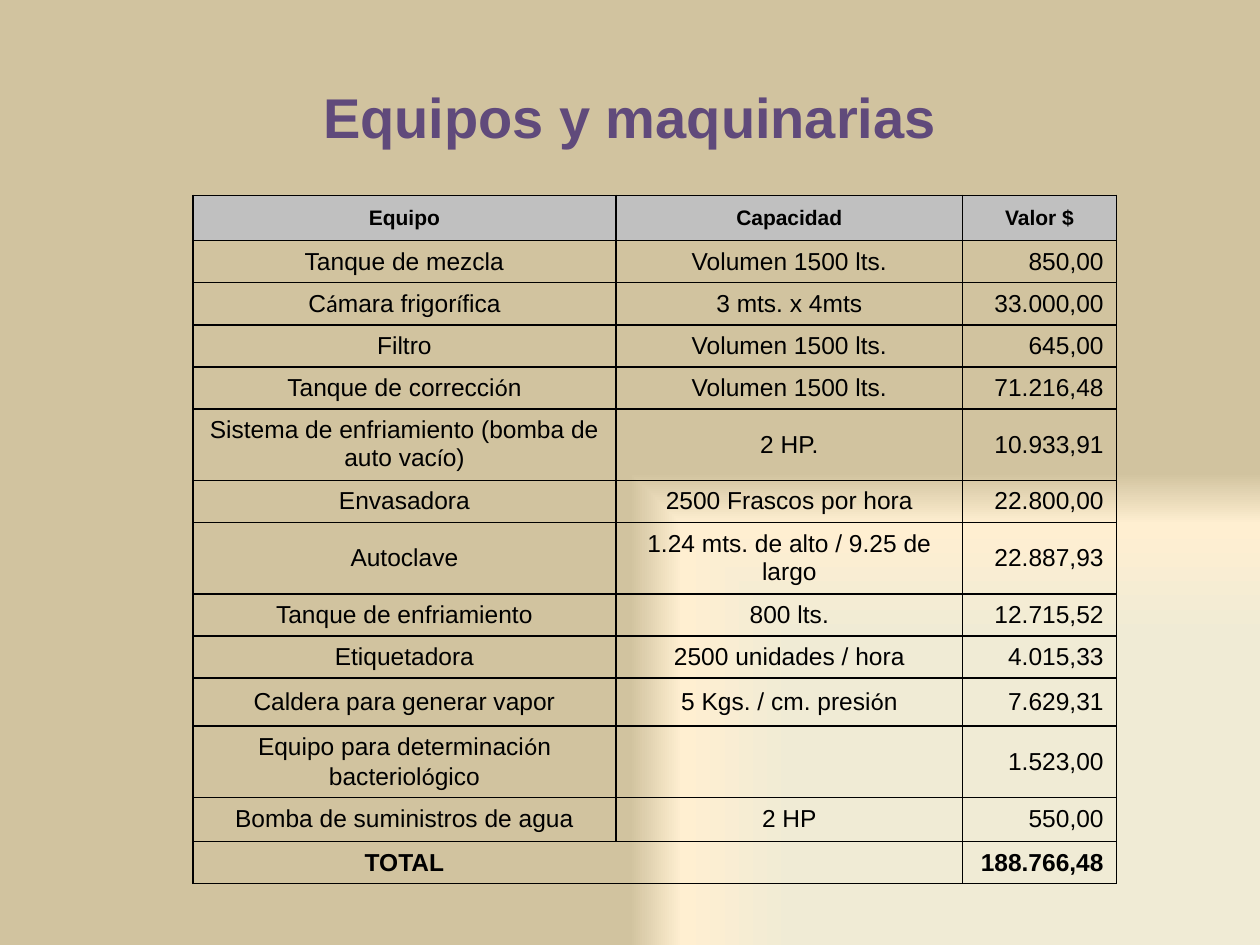
"""Build the equipment and machinery cost slide."""
from dataclasses import dataclass
from itertools import groupby

from lxml import etree
from pptx import Presentation
from pptx import util as u
from pptx.dml.color import RGBColor
from pptx.enum import text
from pptx.oxml import parse_xml
from pptx.oxml.ns import nsdecls, qn

COLORS = {
    "title": "604A7B",
    "ink": "000000",
    "header": "C0C0C0",
    "cream": "F0EBD5",
    "glow": "FFEFD1",
    "sand": "D1C39F",
}
ACCENTED = "áíó"
COLUMN_WIDTHS = (3.36, 2.75, 1.22)
CENTER, RIGHT = text.PP_ALIGN.CENTER, text.PP_ALIGN.RIGHT


@dataclass(frozen=True)
class Row:
    height: float
    equipment: str
    capacity: str
    value: str
    size: int = 14
    bold: bool = False


ROWS = (
    Row(0.36, "Equipo", "Capacidad", "Valor $", size=12, bold=True),
    Row(0.28, "Tanque de mezcla", "Volumen 1500 lts.", "850,00"),
    Row(0.29, "Cámara frigorífica", "3 mts. x 4mts", "33.000,00"),
    Row(0.28, "Filtro", "Volumen 1500 lts.", "645,00"),
    Row(0.29, "Tanque de corrección", "Volumen 1500 lts.", "71.216,48"),
    Row(0.5, "Sistema de enfriamiento (bomba de auto vacío)", "2 HP.", "10.933,91"),
    Row(0.31, "Envasadora", "2500 Frascos por hora", "22.800,00"),
    Row(0.3, "Autoclave", "1.24 mts. de alto / 9.25 de largo", "22.887,93"),
    Row(0.32, "Tanque de enfriamiento", "800 lts.", "12.715,52"),
    Row(0.28, "Etiquetadora", "2500 unidades / hora", "4.015,33"),
    Row(0.38, "Caldera para generar vapor", "5 Kgs. / cm. presión", "7.629,31"),
    Row(0.44, "Equipo para determinación bacteriológico", "", "1.523,00"),
    Row(0.35, "Bomba de suministros de agua", "2 HP", "550,00"),
    Row(0.33, "TOTAL", "", "188.766,48", bold=True),
)


def style_span(span, size: int, color: str, bold: bool, name: str = "Arial") -> None:
    """Format one run of text."""
    span.font.name = name
    span.font.size = u.Pt(size)
    span.font.bold = bold
    span.font.color.rgb = RGBColor.from_string(COLORS[color])


def paint_background(page) -> None:
    """Fill the page with a gradient that spreads from the lower right corner."""
    page.background.fill.solid()
    solid = page.element.find(".//" + qn("a:solidFill"))
    gradient = parse_xml(
        f'<a:gradFill {nsdecls("a")} rotWithShape="1"><a:gsLst>'
        f'<a:gs pos="65000"><a:srgbClr val="{COLORS["cream"]}"/></a:gs>'
        f'<a:gs pos="89000"><a:srgbClr val="{COLORS["glow"]}">'
        f'<a:alpha val="37000"/></a:srgbClr></a:gs>'
        f'<a:gs pos="100000"><a:srgbClr val="{COLORS["sand"]}"/></a:gs></a:gsLst>'
        f'<a:path path="rect"><a:fillToRect l="100000" t="100000"/></a:path>'
        f'</a:gradFill>'
    )
    solid.getparent().replace(solid, gradient)


def add_title(page, wording: str) -> None:
    """Add the centred heading."""
    box = page.shapes.add_textbox(u.Inches(0.5), u.Inches(0.3), u.Inches(9), u.Inches(1.25))
    frame = box.text_frame
    frame.word_wrap = True
    frame.vertical_anchor = text.MSO_ANCHOR.MIDDLE
    frame.text = wording
    para = frame.paragraphs[0]
    para.alignment = CENTER
    style_span(para.runs[0], 32, "title", True)


def draw_borders(cell, hidden: str) -> None:
    """Draw one-point cell borders, except on the hidden side."""
    properties = cell._tc.get_or_add_tcPr()
    for index, side in enumerate("LRTB"):
        line = etree.Element(qn(f"a:ln{side}"), w=str(u.Pt(1)))
        if side == hidden:
            etree.SubElement(line, qn("a:noFill"))
        else:
            fill = etree.SubElement(line, qn("a:solidFill"))
            etree.SubElement(fill, qn("a:srgbClr"), val=COLORS["ink"])
        properties.insert(index, line)


def fill_cell(cell, wording: str, row: Row, align, header: bool, hidden: str) -> None:
    """Write and format one cell, with accented letters in Calibri."""
    cell.vertical_anchor = text.MSO_ANCHOR.MIDDLE
    if header:
        cell.fill.solid()
        cell.fill.fore_color.rgb = RGBColor.from_string(COLORS["header"])
    else:
        cell.fill.background()
    draw_borders(cell, hidden)
    para = cell.text_frame.paragraphs[0]
    para.alignment = align
    for accented, letters in groupby(wording, key=lambda letter: letter in ACCENTED):
        span = para.add_run()
        span.text = "".join(letters)
        style_span(span, row.size, "ink", row.bold, "Calibri" if accented else "Arial")
    if not wording:
        etree.SubElement(para._p, qn("a:endParaRPr"), sz=str(row.size * 100))


def add_equipment_table(page) -> None:
    """Add the table of equipment, capacity and value."""
    table = page.shapes.add_table(
        len(ROWS), len(COLUMN_WIDTHS), u.Inches(1.53), u.Inches(1.55),
        u.Inches(sum(COLUMN_WIDTHS)), u.Inches(sum(row.height for row in ROWS)),
    ).table
    table.first_row = table.horz_banding = False
    for column, width in zip(table.columns, COLUMN_WIDTHS):
        column.width = u.Inches(width)
    for row_index, row in enumerate(ROWS):
        table.rows[row_index].height = u.Inches(row.height)
        header = row_index == 0
        open_sides = ("R", "L", "") if row is ROWS[-1] else ("", "", "")
        aligns = (CENTER, CENTER, CENTER if header else RIGHT)
        wordings = (row.equipment, row.capacity, row.value)
        for column_index, (wording, align, hidden) in enumerate(zip(wordings, aligns, open_sides)):
            fill_cell(table.cell(row_index, column_index), wording, row, align, header, hidden)


def main() -> None:
    """Build and save the deck."""
    deck = Presentation()
    deck.slide_width, deck.slide_height = u.Inches(10), u.Inches(7.5)
    page = deck.slides.add_slide(deck.slide_layouts[6])
    paint_background(page)
    add_title(page, "Equipos y maquinarias")
    add_equipment_table(page)
    deck.save("out.pptx")


if __name__ == "__main__":
    main()
